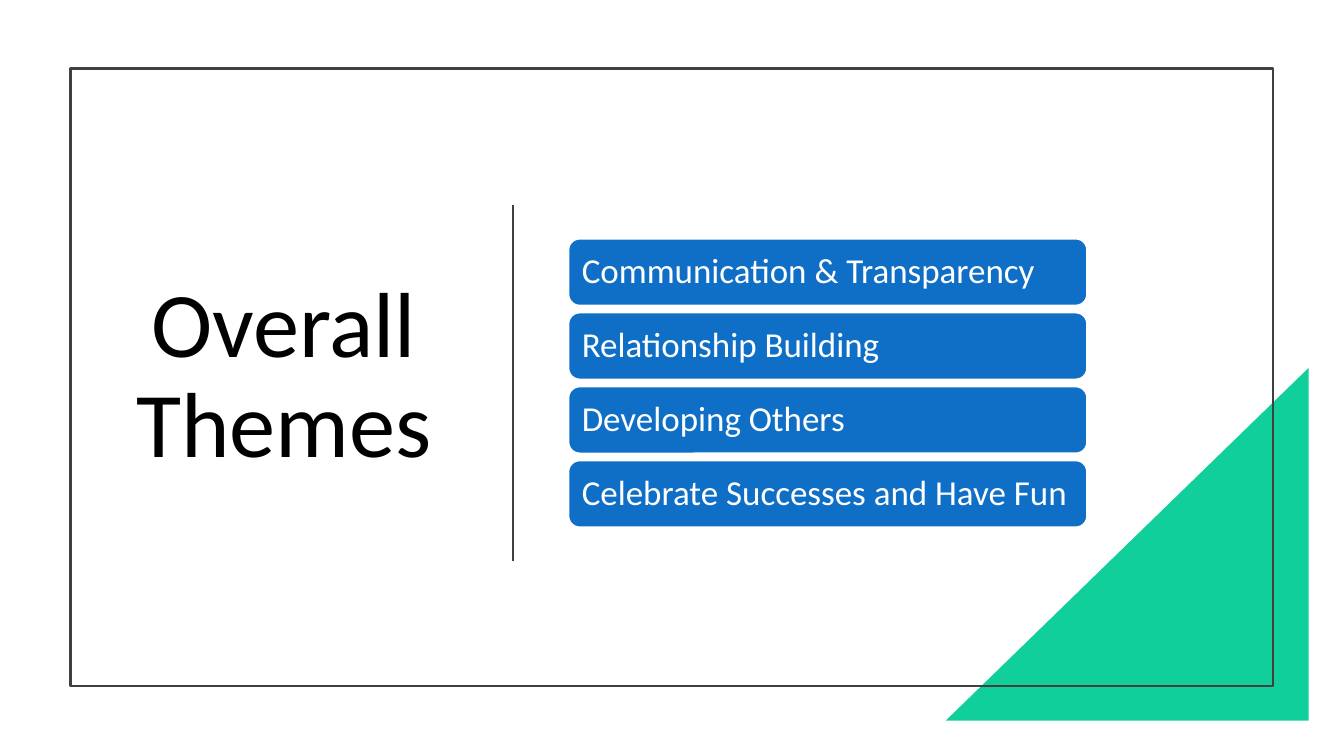
from pptx import Presentation
from pptx.dml.color import RGBColor
from pptx.enum.shapes import MSO_CONNECTOR as Connector, MSO_SHAPE as Shape
from pptx.enum.text import MSO_ANCHOR as Anchor, PP_ALIGN as Align
from pptx.oxml.ns import qn
from pptx.util import Inches, Pt

BLACK = RGBColor(0x00, 0x00, 0x00)
WHITE = RGBColor(0xFF, 0xFF, 0xFF)
GREY = RGBColor(0x40, 0x40, 0x40)
GREEN = RGBColor(0x10, 0xCF, 0x9B)
BLUE = RGBColor(0x0F, 0x6F, 0xC6)

FONT = "Calibri"
THEMES = [
    "Communication & Transparency",
    "Relationship Building",
    "Developing Others",
    "Celebrate Successes and Have Fun",
]


def add_panel(slide, kind, box, fill=None, line=None, weight=1):
    """Add a preset shape without shadow, filled and outlined as given."""
    panel = slide.shapes.add_shape(kind, *map(Inches, box))
    panel.shadow.inherit = False
    if fill is None:
        panel.fill.background()
    else:
        panel.fill.solid()
        panel.fill.fore_color.rgb = fill
    if line is None:
        panel.line.fill.background()
    else:
        panel.line.color.rgb = line
        panel.line.width = Pt(weight)
    return panel


def write(frame, text, size, color, align, inset):
    """Write one middle-anchored paragraph into a text frame."""
    frame.word_wrap = True
    frame.vertical_anchor = Anchor.MIDDLE
    frame.margin_left = frame.margin_right = Inches(inset)
    paragraph = frame.paragraphs[0]
    paragraph.text = text
    paragraph.alignment = align
    paragraph.line_spacing = 0.9
    paragraph.font.name = FONT
    paragraph.font.size = Pt(size)
    paragraph.font.color.rgb = color


def add_backdrop(slide, box):
    """Draw the corner triangle and the frame over it."""
    left, top, width, height = box
    corner_box = (left + width - 3.25, top + height - 3.16, 3.6, 3.5)
    corner = add_panel(slide, Shape.RIGHT_TRIANGLE, corner_box, fill=GREEN)
    corner.element.spPr.xfrm.set("flipH", "1")
    add_panel(slide, Shape.RECTANGLE, box, line=GREY, weight=1.5)


def add_title(slide, box):
    """Write the title and draw the divider to its right."""
    left, top, width, height = box
    title = slide.shapes.add_textbox(*map(Inches, box))
    write(title.text_frame, "Overall Themes", 66, BLACK, Align.CENTER, 0.1)

    divider_x, middle, half = left + width + 0.64, top + height / 2 + 0.05, 1.77
    divider = slide.shapes.add_connector(
        Connector.STRAIGHT,
        Inches(divider_x), Inches(middle - half),
        Inches(divider_x), Inches(middle + half),
    )
    divider.line.color.rgb = GREY
    divider.line.width = Pt(1.5)
    properties = divider.element.spPr
    properties.append(properties.makeelement(qn("a:effectLst"), {}))


def add_themes(slide, box, bar_height=0.66):
    """Stack one rounded bar per theme, evenly spread over the box."""
    left, top, width, height = box
    step = (height - bar_height) / (len(THEMES) - 1)
    for row, theme in enumerate(THEMES):
        bar_box = (left, top + row * step, width, bar_height)
        bar = add_panel(slide, Shape.ROUNDED_RECTANGLE, bar_box, BLUE, WHITE)
        write(bar.text_frame, theme, 25, WHITE, Align.LEFT, 0.1)


def main():
    """Build and save the slide."""
    deck = Presentation()
    deck.slide_width, deck.slide_height = Inches(13.33), Inches(7.5)
    slide = deck.slides.add_slide(deck.slide_layouts[6])
    add_backdrop(slide, (0.7, 0.68, 11.93, 6.13))
    add_title(slide, (1.18, 1.3, 3.27, 4.9))
    add_themes(slide, (5.64, 2.37, 5.14, 2.86))
    deck.save("out.pptx")


if __name__ == "__main__":
    main()
